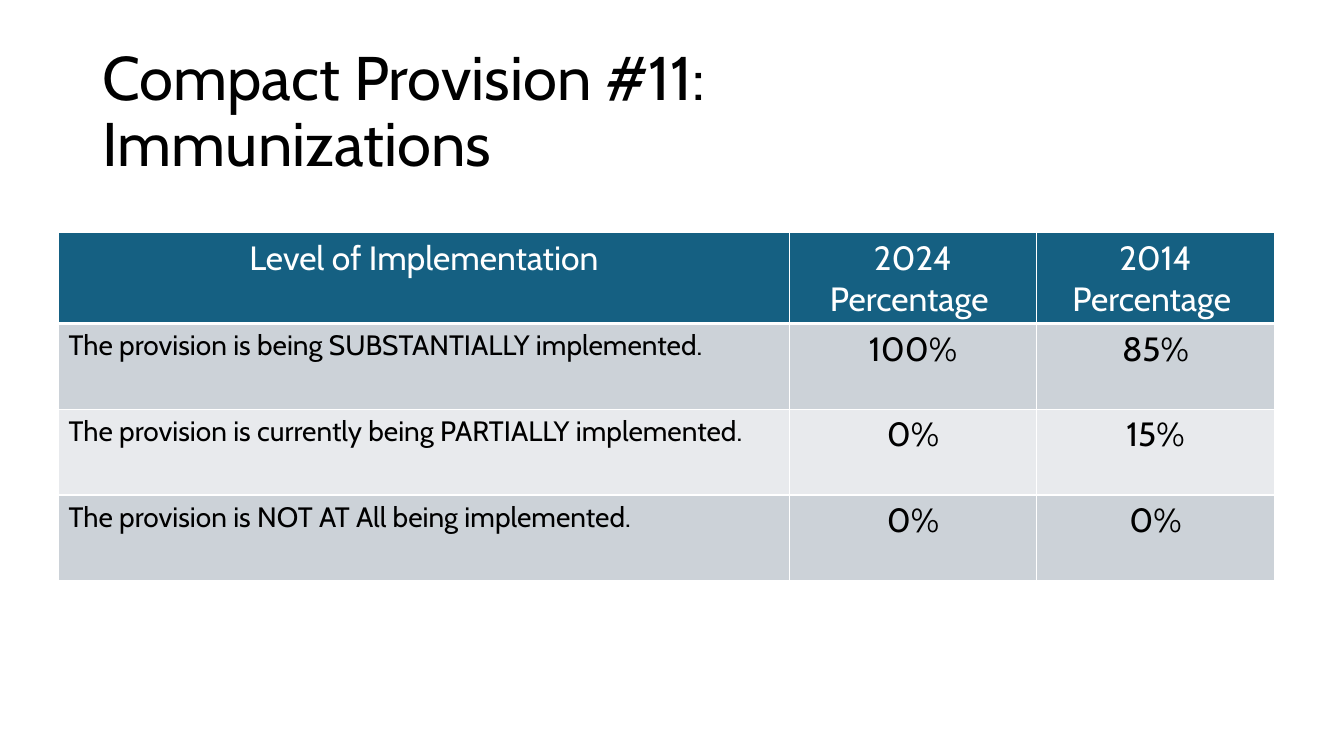
from lxml.etree import SubElement
from pptx import Presentation
from pptx.dml.color import RGBColor
from pptx.enum.text import MSO_ANCHOR as Anchor, PP_ALIGN as Align
from pptx.oxml.ns import qn
from pptx.util import Inches, Pt

FONT = "Cabin"
COLORS = {
    "white": "FFFFFF",
    "black": "000000",
    "header": "156082",
    "band_dark": "CCD2D8",
    "band_light": "E8EAED",
}
TITLE_LINES = ["Compact Provision #11: ", "Immunizations"]
HEADINGS = ["Level of Implementation", "2024 Percentage ", "2014 Percentage "]
LEVELS = [
    ["The provision is being SUBSTANTIALLY implemented.", "100%", "85%"],
    ["The provision is currently being PARTIALLY implemented.", "0%", "15%"],
    ["The provision is NOT AT All being implemented.", "0%", "0%"],
]
COLUMN_WIDTHS = [7.25, 2.45, 2.36]
ROW_HEIGHTS = [0.9, 0.85, 0.85, 0.85]


def add_span(para, text, size, color):
    span = para.add_run()
    span.text = text
    span.font.name = FONT
    span.font.size = Pt(size)
    span.font.color.rgb = RGBColor.from_string(COLORS[color])


def add_title(page, left, top, width, height):
    box = page.shapes.add_textbox(Inches(left), Inches(top), Inches(width), Inches(height))
    frame = box.text_frame
    frame.word_wrap = True
    frame.vertical_anchor = Anchor.MIDDLE
    para = frame.paragraphs[0]
    para.line_spacing = 0.9
    for index, line in enumerate(TITLE_LINES):
        if index:
            para.add_line_break()
        add_span(para, line, 44, "black")


def set_borders(cell, bottom_width):
    properties = cell._tc.get_or_add_tcPr()
    for side, width in (("L", 1), ("R", 1), ("T", 1), ("B", bottom_width)):
        line = SubElement(properties, qn(f"a:ln{side}"), w=str(Pt(width)))
        fill = SubElement(line, qn("a:solidFill"))
        SubElement(fill, qn("a:srgbClr"), val=COLORS["white"])


def fill_cell(cell, text, size, color, fill, align, bottom_width):
    set_borders(cell, bottom_width)
    cell.fill.solid()
    cell.fill.fore_color.rgb = RGBColor.from_string(COLORS[fill])
    para = cell.text_frame.paragraphs[0]
    para.alignment = align
    add_span(para, text, size, color)


def add_levels_table(page, left, top):
    rows = [HEADINGS] + LEVELS
    table = page.shapes.add_table(
        len(rows), len(HEADINGS), Inches(left), Inches(top),
        Inches(sum(COLUMN_WIDTHS)), Inches(sum(ROW_HEIGHTS)),
    ).table
    for column, width in zip(table.columns, COLUMN_WIDTHS):
        column.width = Inches(width)
    for row, height in zip(table.rows, ROW_HEIGHTS):
        row.height = Inches(height)
    for row_index, texts in enumerate(rows):
        for column_index, text in enumerate(texts):
            cell = table.cell(row_index, column_index)
            if row_index == 0:
                fill_cell(cell, text, 24, "white", "header", Align.CENTER, 3)
                continue
            band = "band_dark" if row_index % 2 else "band_light"
            size, align = (24, Align.CENTER) if column_index else (20, Align.LEFT)
            fill_cell(cell, text, size, "black", band, align, 1)


def main():
    deck = Presentation()
    deck.slide_width = Inches(13.33)
    deck.slide_height = Inches(7.5)
    page = deck.slides.add_slide(deck.slide_layouts[6])
    add_title(page, 0.92, 0.4, 11.5, 1.45)
    add_levels_table(page, 0.58, 2.31)
    deck.save("out.pptx")


if __name__ == "__main__":
    main()
